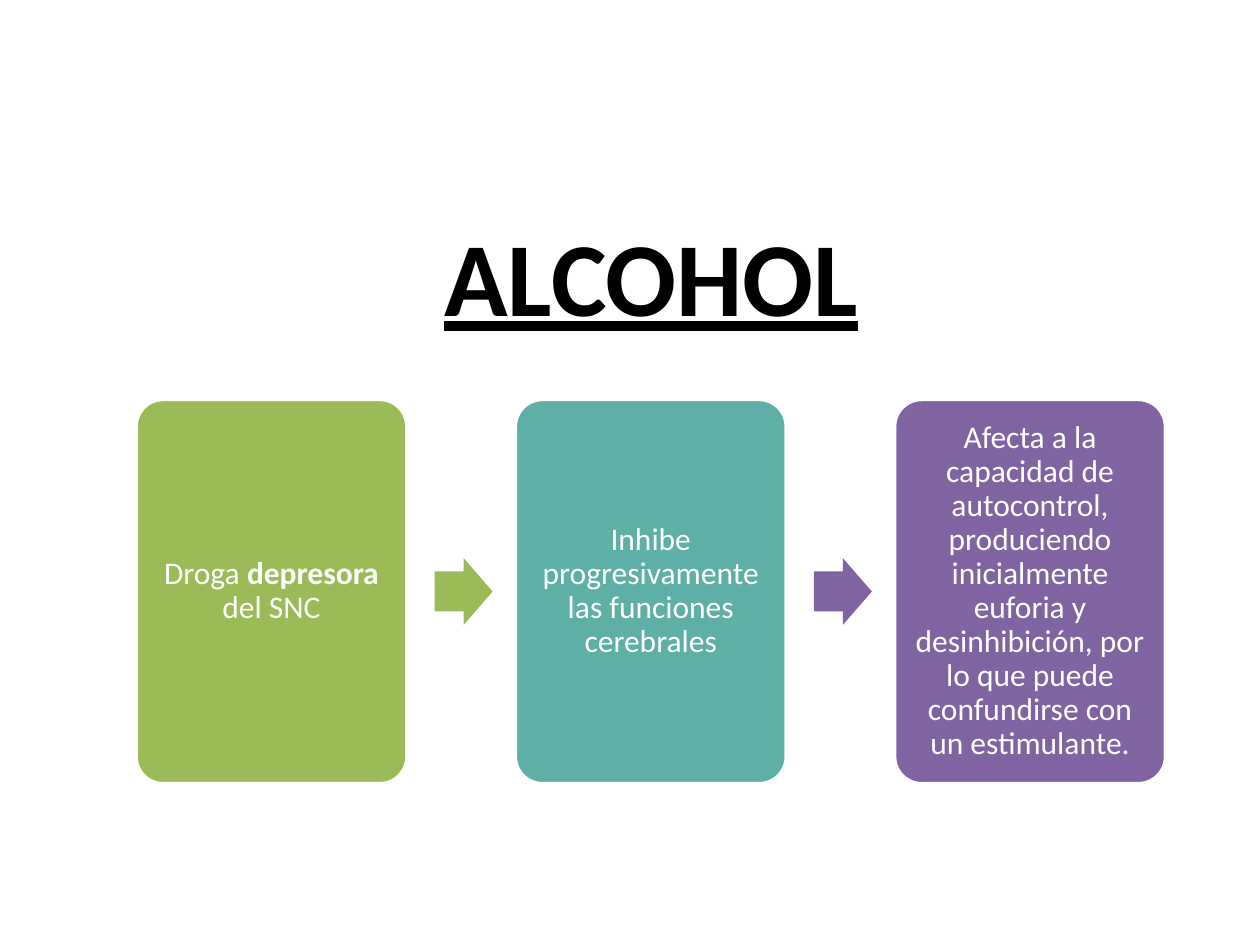
"""Build the slide that describes alcohol as a three-step process."""
import pptx
import pptx.dml.color
import pptx.enum.shapes
import pptx.enum.text
import pptx.util

Inches = pptx.util.Inches
SHAPES = pptx.enum.shapes.MSO_SHAPE
CENTER = pptx.enum.text.PP_ALIGN.CENTER
MIDDLE = pptx.enum.text.MSO_ANCHOR.MIDDLE

TITLE = "ALCOHOL"
STEPS = [
    ("green", [("Droga ", False), ("depresora", True), (" del SNC", False)]),
    ("teal", [("Inhibe progresivamente las funciones cerebrales", False)]),
    ("purple", [("Afecta a la capacidad de autocontrol, produciendo inicialmente "
                 "euforia y desinhibición, por lo que puede confundirse con un "
                 "estimulante.", False)]),
]
THEME = {
    "font": "Calibri", "title_size": 60, "step_size": 18, "outline": 2,
    "black": "000000", "white": "FFFFFF",
    "green": "9BBB59", "teal": "5EAFA6", "purple": "8064A2",
}
TITLE_BOX = (0.67, 1.55, 9, 1.25)
STEP_LEFT, STEP_TOP, STEP_WIDTH, STEP_HEIGHT = 1.08, 3.17, 2.15, 3.05
STEP_PITCH = 3.01
ARROW_WIDTH, ARROW_HEIGHT, ARROW_GAP = 0.46, 0.53, 0.22
INSET = 0.07


def color(name):
    return pptx.dml.color.RGBColor.from_string(THEME[name])


def apply(target, values):
    for name, value in values.items():
        setattr(target, name, value)


def style_font(font, size, ink, **extra):
    apply(font, {"name": THEME["font"], "size": pptx.util.Pt(THEME[size]), **extra})
    font.color.rgb = color(ink)


def add_block(slide, kind, box, fill, adjustments):
    block = slide.shapes.add_shape(kind, *map(Inches, box))
    block.shadow.inherit = False
    block.fill.solid()
    block.fill.fore_color.rgb = color(fill)
    block.line.fill.background()
    for index, value in enumerate(adjustments):
        block.adjustments[index] = value
    return block


def add_title(slide):
    title = slide.shapes.title
    apply(title, dict(zip(("left", "top", "width", "height"), map(Inches, TITLE_BOX))))
    title.text_frame.vertical_anchor = MIDDLE
    heading = title.text_frame.paragraphs[0]
    heading.alignment = CENTER
    run = heading.add_run()
    run.text = TITLE
    style_font(run.font, "title_size", "black", bold=True, underline=True)


def add_step(slide, left, fill, runs):
    card = add_block(slide, SHAPES.ROUNDED_RECTANGLE,
                     (left, STEP_TOP, STEP_WIDTH, STEP_HEIGHT), fill, [0.1])
    card.line.color.rgb = color("white")
    card.line.width = pptx.util.Pt(THEME["outline"])
    margins = dict.fromkeys(
        ("margin_left", "margin_top", "margin_right", "margin_bottom"), Inches(INSET))
    apply(card.text_frame, {"word_wrap": True, "vertical_anchor": MIDDLE, **margins})
    statement = card.text_frame.paragraphs[0]
    apply(statement, {"alignment": CENTER, "line_spacing": 0.9})
    for text, bold in runs:
        run = statement.add_run()
        run.text = text
        style_font(run.font, "step_size", "white", bold=bold)


def add_arrow(slide, left, fill):
    top = STEP_TOP + (STEP_HEIGHT - ARROW_HEIGHT) / 2
    add_block(slide, SHAPES.RIGHT_ARROW,
              (left, top, ARROW_WIDTH, ARROW_HEIGHT), fill, [0.6, 0.5])


def main():
    deck = pptx.Presentation()
    apply(deck, {"slide_width": Inches(10), "slide_height": Inches(7.5)})
    slide = deck.slides.add_slide(deck.slide_layouts.get_by_name("Title Only"))
    add_title(slide)
    arrow_fills = ["green", "purple"]
    for index, (fill, runs) in enumerate(STEPS):
        left = STEP_LEFT + index * STEP_PITCH
        add_step(slide, left, fill, runs)
        if index < len(arrow_fills):
            add_arrow(slide, left + STEP_WIDTH + ARROW_GAP, arrow_fills[index])
    deck.save("out.pptx")


if __name__ == "__main__":
    main()
